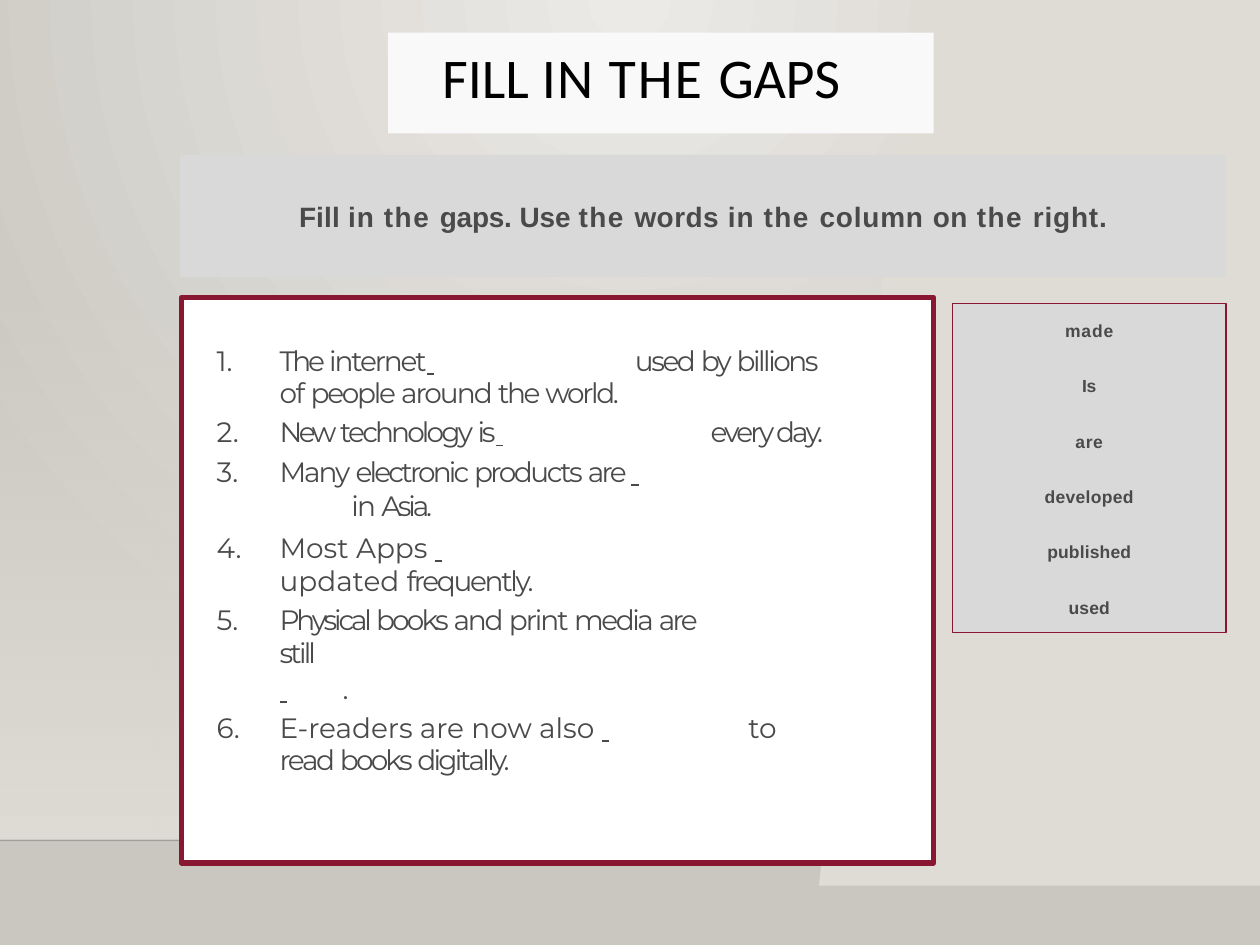
from lxml import etree
from pptx import Presentation
from pptx import util as u
from pptx.dml.color import RGBColor
from pptx.enum import shapes, text
from pptx.oxml.ns import qn

COLORS = {
    "glow": "ECEAE7", "floor": "CAC7C1", "wall": "DFDBD5", "horizon": "000001",
    "label": "F9F9F9", "panel": "D9D9D9", "paper": "FFFFFF",
    "accent": "891731", "title": "000000", "body": "4A4A4A",
}
COLUMNS, ROWS = 100, 75
CELL = u.Inches(0.1)

# A run is (words, letter spacing in points); BLANK starts a gap to be filled in.
BLANK = (" ", -1.2, True)
TITLE = [("FILL ", 0), ("IN ", 0.7), ("THE ", 1.1), ("GAPS", -0.2)]
TASK = [("Fill ", 0.1), ("in ", 0.6), ("the ", 0.9), ("gaps. ", -0.1),
        ("Use ", 0), ("the ", 0.9), ("words ", 0.3), ("in ", 0.6),
        ("the ", 0.9), ("column ", 0.5), ("on ", 0.4), ("the ", 0.9),
        ("right.", 0.5)]
WORDS = [("made", 0.5), ("Is", -0.1), ("are", 0.4),
         ("developed", 0.2), ("published", 0.1), ("used", 0.1)]

# Each sentence: number, space before, line height, tab column, lines of runs.
SENTENCES = [
    (1, 0, 18.7, 33.3, [
        [("The ", -1.8), ("internet", -1.2), BLANK, ("\t", 0), ("used ", -1.4),
         ("by ", -1.5), ("billions", -1.4)],
        [("of ", -0.9), ("people ", -1.3), ("around ", -1.1), ("the ", -1.4),
         ("world.", -1.3)]]),
    (2, 3.5, 18.7, 39.3, [
        [("New ", -2), ("technology ", -1.6), ("is", -1.8), BLANK, ("\t", 0),
         ("every day.", -1.6)]]),
    (3, 3, 19.6, 10.8, [
        [("Many ", -1.2), ("electronic ", -1.6), ("products ", -1.4),
         ("are ", -1.5), BLANK],
        [("\t", 0), ("in ", -1.1), ("Asia.", -1.8)]]),
    (4, 5.2, 18.7, None, [
        [("Most Apps ", 0), BLANK],
        [("updated ", 0), ("frequently.", -1.3)]]),
    (5, 3.6, 18.9, None, [
        [("Physical ", -1.8), ("books ", -1.6), ("and ", -1.2),
         ("print ", -1.1), ("media ", -1.4), ("are", -1.5)],
        [("still", -1.6)]]),
    (None, 1.5, 18.9, 20.6, [[BLANK, ("\t", 0), (".", -1.1)]]),
    (6, 3.6, 18.7, 42.3, [
        [("E-readers are now also ", 0), BLANK, ("\t", 0), ("to", 0)],
        [("read ", -1.4), ("books ", -1.6), ("digitally.", -1.5)]]),
]


def cells(*counts):
    return [int(count * CELL) for count in counts]


def color(name):
    return RGBColor.from_string(COLORS[name])


def paint(fill, name):
    fill.solid()
    fill.fore_color.rgb = color(name)


def set_alpha(color_element, percent):
    etree.SubElement(color_element, qn("a:alpha"), val=str(percent * 1000))


def blend(fill, *names):
    fill.gradient()
    for stop, name in zip(fill.gradient_stops, names):
        stop.color.rgb = color(name)


def add_box(page, area, fill=None, border=None, width=0):
    box = page.shapes.add_shape(shapes.MSO_SHAPE.RECTANGLE, *cells(*area))
    box.shadow.inherit = False
    if fill:
        paint(box.fill, fill)
    if border:
        box.line.color.rgb = color(border)
        box.line.width = u.Pt(width)
    else:
        box.line.fill.background()
    return box


def prepare_frame(box, top=0.1, anchor=text.MSO_ANCHOR.TOP):
    frame = box.text_frame
    frame.word_wrap = True
    frame.vertical_anchor = anchor
    frame.margin_left = frame.margin_right = frame.margin_bottom = 0
    frame.margin_top = cells(top)[0]
    return frame


def add_run(para, words, spacing, underline=False):
    span = para.add_run()
    span.text = words
    if underline:
        span.font.underline = True
    if spacing:
        span.font._element.set("spc", str(round(spacing * 100)))


def style(para, family, size, ink, bold=False):
    """Set the font on each run, so that it holds for every piece of text."""
    for span in para.runs:
        span.font.name = family
        span.font.size = u.Pt(size)
        span.font.bold = bold
        span.font.color.rgb = color(ink)


def next_para(frame, index):
    return frame.add_paragraph() if index else frame.paragraphs[0]


def set_list_format(para, number, tab):
    """Hang the text by five columns, with an optional number and tab stop."""
    props = para._p.get_or_add_pPr()
    indent, hang = cells(5.1, -5 if number else 0)
    props.set("marL", str(indent))
    props.set("indent", str(hang))
    if number:
        etree.SubElement(props, qn("a:buFont"), typeface="Montserrat")
        etree.SubElement(props, qn("a:buAutoNum"), type="arabicPeriod",
                         startAt=str(number))
    else:
        etree.SubElement(props, qn("a:buNone"))
    if tab:
        stops = etree.SubElement(props, qn("a:tabLst"))
        etree.SubElement(stops, qn("a:tab"), pos=str(cells(tab)[0]), algn="l")


def add_backdrop(page):
    blend(page.background.fill, "glow", "floor")
    gradient = next(page._element.iter(qn("a:gradFill")))
    gradient.remove(gradient.find(qn("a:lin")))
    glow = etree.SubElement(gradient, qn("a:path"))
    glow.set("path", "circle")
    etree.SubElement(glow, qn("a:fillToRect"), l="43000", r="43000", b="100000")

    haze = add_box(page, (0, 22, COLUMNS, 44.6))
    blend(haze.fill, "wall", "wall")
    haze.fill.gradient_angle = 270
    set_alpha(next(haze._element.iter(qn("a:srgbClr"))), 0)

    horizon = page.shapes.add_connector(
        shapes.MSO_CONNECTOR.STRAIGHT, *cells(0, 66.7, COLUMNS, 66.7))
    horizon.line.color.rgb = color("horizon")
    horizon.line.width = u.Pt(1)
    set_alpha(next(horizon._element.iter(qn("a:srgbClr"))), 20)
    etree.SubElement(horizon._element.spPr, qn("a:effectLst"))

    builder = page.shapes.build_freeform(COLUMNS * CELL, 0)
    builder.add_line_segments(
        [cells(72.3, 0), cells(65, 70.3), cells(COLUMNS, 70.3)])
    wall = builder.convert_to_shape()
    wall.shadow.inherit = False
    paint(wall.fill, "wall")
    wall.line.fill.background()


def add_heading(page):
    add_box(page, (30.8, 2.6, 43.3, 8), "label")
    box = page.shapes.add_textbox(*cells(35.1, 3.3, 35, 5.5))
    para = prepare_frame(box).paragraphs[0]
    for run in TITLE:
        add_run(para, *run)
    style(para, "Calibri", 32, "title")


def add_task(page):
    box = add_box(page, (14.3, 12.3, 83, 9.7), "panel")
    para = prepare_frame(box, 0, text.MSO_ANCHOR.MIDDLE).paragraphs[0]
    para.alignment = text.PP_ALIGN.CENTER
    for run in TASK:
        add_run(para, *run)
    style(para, "Arial", 16, "body", bold=True)


def add_sentences(page):
    add_box(page, (14.4, 23.6, 59.7, 44.9), "paper", "accent", 3)
    frame = prepare_frame(page.shapes.add_textbox(*cells(17.1, 27, 55, 35)), 0.3)
    for index, (number, before, height, tab, lines) in enumerate(SENTENCES):
        para = next_para(frame, index)
        para.line_spacing = u.Pt(height)
        if before:
            para.space_before = u.Pt(before)
        set_list_format(para, number, tab)
        for row, line in enumerate(lines):
            if row:
                para.add_line_break()
            for run in line:
                add_run(para, *run)
        style(para, "Montserrat", 16, "body")


def add_word_bank(page):
    box = add_box(page, (75.6, 24.1, 21.7, 26.1), "panel", "accent", 0.75)
    frame = prepare_frame(box, 1.3)
    for index, run in enumerate(WORDS):
        para = next_para(frame, index)
        para.alignment = text.PP_ALIGN.CENTER
        if index:
            para.space_before = u.Pt(19.6)
        add_run(para, *run)
        style(para, "Arial", 10, "body", bold=True)


def main():
    deck = Presentation()
    deck.slide_width, deck.slide_height = COLUMNS * CELL, ROWS * CELL
    page = deck.slides.add_slide(deck.slide_layouts[6])
    add_backdrop(page)
    add_heading(page)
    add_task(page)
    add_sentences(page)
    add_word_bank(page)
    deck.save("out.pptx")


if __name__ == "__main__":
    main()
